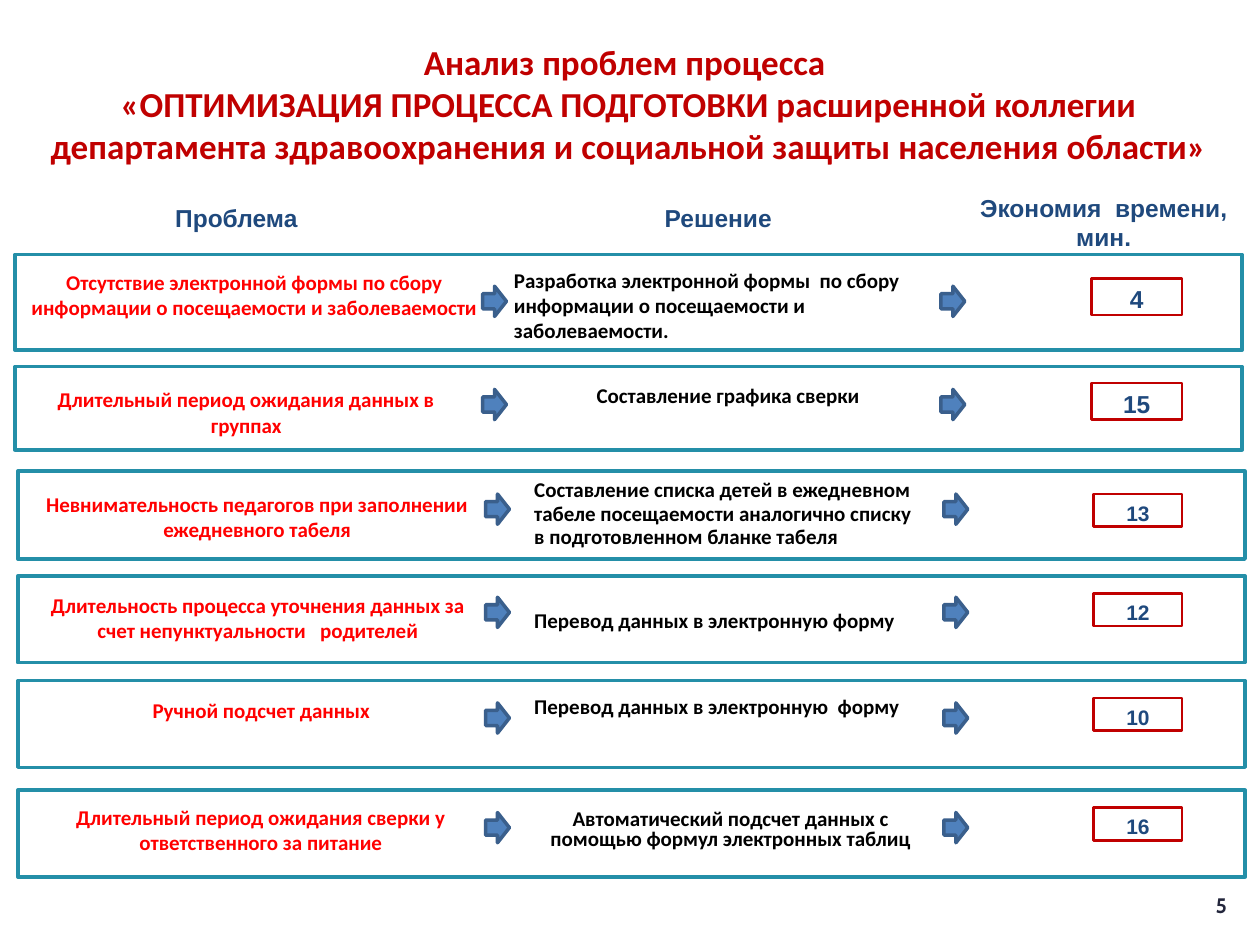
"""Build a slide that pairs process problems with solutions and minutes saved."""
from pptx import Presentation
from pptx import util as u
from pptx.dml.color import RGBColor
from pptx.enum import shapes, text

DARK_RED = RGBColor(0xC0, 0x00, 0x00)
RED = RGBColor(0xFF, 0x00, 0x00)
BLACK = RGBColor(0x00, 0x00, 0x00)
NAVY = RGBColor(0x1F, 0x49, 0x7D)
INK = RGBColor(0x23, 0x26, 0x3C)
TEAL = RGBColor(0x24, 0x8F, 0xA8)
BLUE = RGBColor(0x4F, 0x81, 0xBD)
BLUE_EDGE = RGBColor(0x3A, 0x5F, 0x8C)

LEFT, CENTER = text.PP_ALIGN.LEFT, text.PP_ALIGN.CENTER
TOP, MIDDLE = text.MSO_ANCHOR.TOP, text.MSO_ANCHOR.MIDDLE
RECT, ARROW = shapes.MSO_SHAPE.RECTANGLE, shapes.MSO_SHAPE.RIGHT_ARROW

HEADERS = [
    ("Проблема", (2.44, 3.96, 4.65, 0.76)),
    ("Решение", (12.27, 3.96, 4.42, 0.76)),
    ("Экономия  времени, мин.", (19.1, 3.76, 6.3, 1.35)),
]

ROWS = [
    ((0.3, 5.13, 1.93), 5.77,
     ("Отсутствие электронной формы по сбору информации о посещаемости и заболеваемости",
      (0.05, 5.21, 10.16, 1.7), {}),
     ("Разработка электронной формы  по сбору информации о посещаемости и заболеваемости.",
      (10.11, 5.16, 8.64, 1.8), {"align": LEFT}),
     ("4", (22, 5.61, 1.83, 0.74), 14)),
    ((0.3, 7.39, 1.68), 7.85,
     ("Длительный период ожидания данных в группах", (0.56, 7.57, 8.81, 1.3), {}),
     ("Составление графика сверки", (10.59, 7.57, 8.18, 0.66), {"spacing": 0.8}),
     ("15", (22, 7.72, 1.83, 0.74), 14)),
    ((0.36, 9.5, 1.77), 9.96,
     ("Невнимательность педагогов при заполнении ежедневного табеля",
      (0.36, 9.68, 9.65, 1.3), {}),
     ("Составление списка детей в ежедневном табеле посещаемости аналогично списку "
      "в подготовленном бланке табеля",
      (10.52, 9.53, 8.33, 1.68), {"align": LEFT, "spacing": 0.93, "top": 0.13}),
     ("13", (22.05, 9.96, 1.78, 0.66), 12)),
    ((0.36, 11.61, 1.75), 12.04,
     ("Длительность процесса уточнения данных за счет непунктуальности   родителей",
      (0.64, 11.71, 9.12, 1.3), {}),
     ("Перевод данных в электронную форму",
      (10.52, 12.12, 8.33, 0.76), {"align": LEFT, "top": 0.13}),
     ("12", (22.05, 11.96, 1.78, 0.66), 12)),
    ((0.36, 13.72, 1.75), 14.17,
     ("Ручной подсчет данных", (0.71, 13.84, 9.12, 1.3), {}),
     ("Перевод данных в электронную  форму",
      (10.52, 13.89, 8.33, 0.74), {"align": LEFT, "spacing": 0.93, "top": 0.13}),
     ("10", (22.05, 14.07, 1.78, 0.66), 12)),
    ((0.36, 15.93, 1.75), 16.38,
     ("Длительный период ожидания сверки у ответственного за питание",
      (0.79, 16.08, 8.94, 1.27), {"top": 0.13}),
     ("Автоматический подсчет данных с помощью формул электронных таблиц",
      (10.64, 16.1, 8.18, 1.3), {"spacing": 0.8}),
     ("16", (22.05, 16.28, 1.78, 0.66), 12)),
]


class Deck:
    frame_width = 24.74
    arrow_offsets = (9.43, 18.67)

    def __init__(self):
        self.prs = Presentation()
        self.prs.slide_width, self.prs.slide_height = u.Cm(25.4), u.Cm(19.05)
        self.s = self.prs.slides.add_slide(self.prs.slide_layouts[6])

    def add_text(self, sp, lines, size, color, font="Calibri", align=CENTER,
                 anchor=TOP, spacing=None, top=0.23, bottom=0.03):
        tf = sp.text_frame
        tf.word_wrap = True
        tf.vertical_anchor = anchor
        tf.margin_left = tf.margin_right = u.Cm(0.25)
        tf.margin_top, tf.margin_bottom = u.Cm(top), u.Cm(bottom)
        p = tf.paragraphs[0]
        p.alignment = align
        if spacing:
            p.line_spacing = spacing
        for i, line in enumerate(lines):
            if i:
                p.add_line_break()
            r = p.add_run()
            r.text = line
            r.font.name, r.font.size, r.font.bold = font, u.Pt(size), True
            r.font.color.rgb = color

    def label(self, box, lines, size, color, **style):
        sp = self.s.shapes.add_textbox(*map(u.Cm, box))
        self.add_text(sp, lines, size, color, **style)

    def shape(self, kind, box, line, width, fill=None):
        sp = self.s.shapes.add_shape(kind, *map(u.Cm, box))
        sp.shadow.inherit = False
        sp.line.color.rgb, sp.line.width = line, u.Pt(width)
        if fill is None:
            sp.fill.background()
        else:
            sp.fill.solid()
            sp.fill.fore_color.rgb = fill
        return sp

    def minutes(self, value, box, size):
        sp = self.shape(RECT, box, DARK_RED, 1.5)
        self.add_text(sp, [value], size, NAVY, font="Arial", anchor=MIDDLE, spacing=0.8)

    def row(self, frame, arrow_y, problem, solution, minutes):
        x, y, height = frame
        for (words, box, style), color in ((problem, RED), (solution, BLACK)):
            self.label(box, [words], 12, color, **style)
        self.minutes(*minutes)
        self.shape(RECT, (x, y, self.frame_width, height), TEAL, 2)
        for offset in self.arrow_offsets:
            self.shape(ARROW, (x + offset, arrow_y, 0.48, 0.61), BLUE_EDGE, 2, BLUE)


def main():
    deck = Deck()
    deck.label((24, 17.86, 1.24, 0.79), ["5"], 12, INK, font="Cabin",
               anchor=MIDDLE, top=0.13, bottom=0.13)
    deck.label((0.61, 0.91, 24.13, 2.36),
               ["Анализ проблем процесса ",
                "«ОПТИМИЗАЦИЯ ПРОЦЕССА ПОДГОТОВКИ расширенной коллегии "
                "департамента здравоохранения и социальной защиты населения области»"],
               20, DARK_RED, anchor=MIDDLE, top=0.13, bottom=0.13)
    for words, box in HEADERS:
        deck.label(box, [words], 14, NAVY, font="Arial", top=0.13)
    for row in ROWS:
        deck.row(*row)
    deck.prs.save("out.pptx")


if __name__ == "__main__":
    main()
